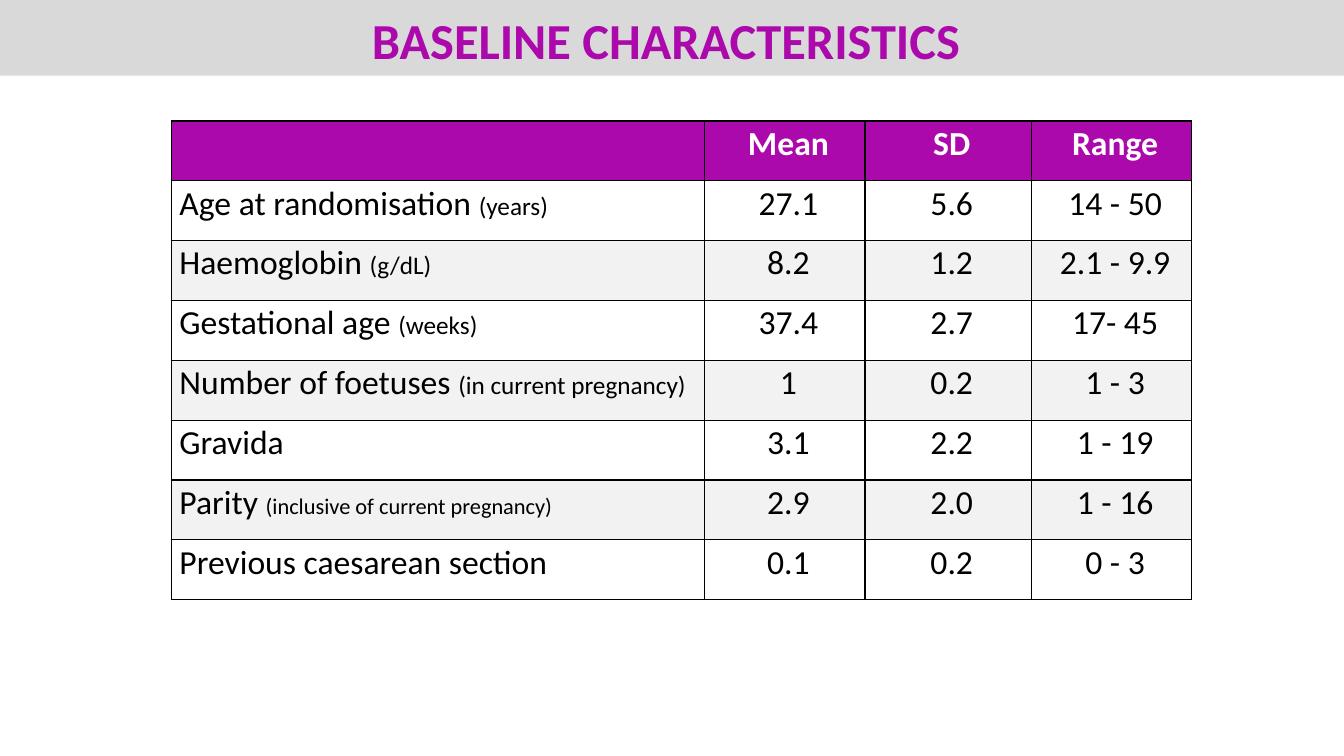
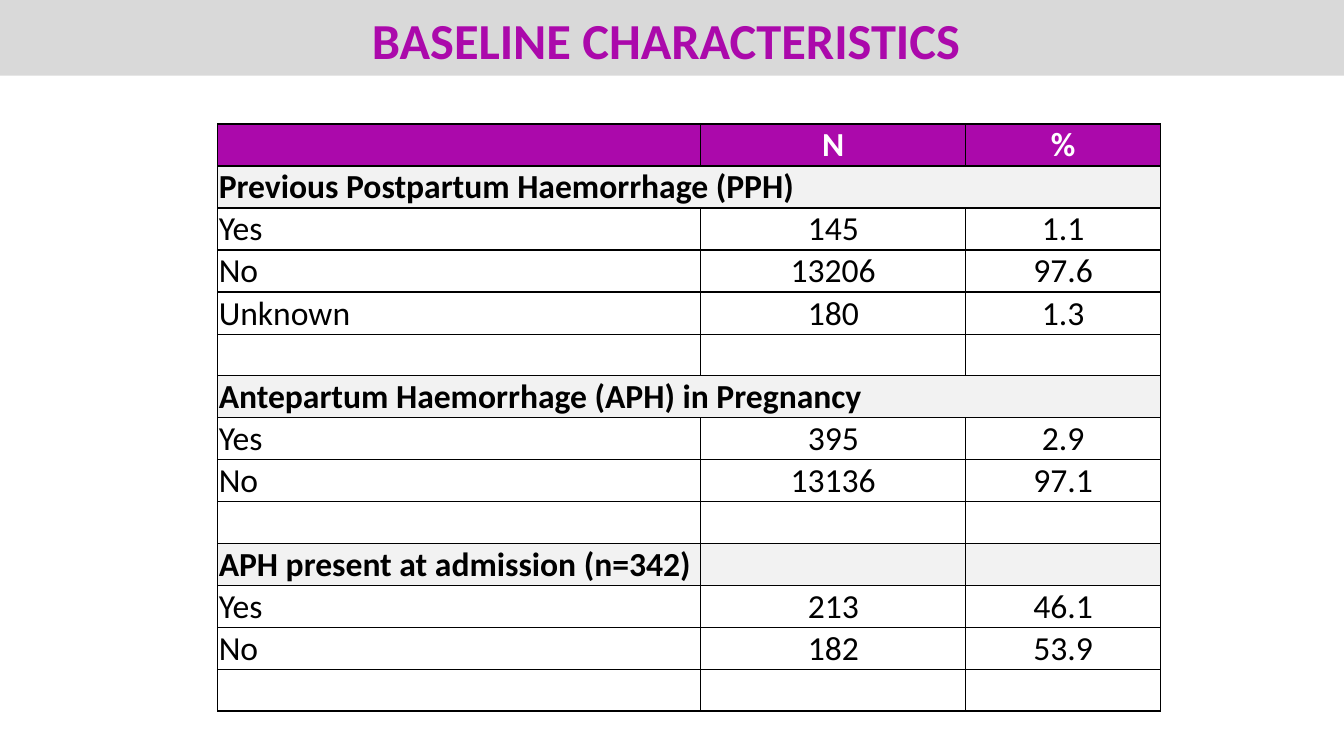
from lxml import etree
from pptx import Presentation
from pptx import util as u
from pptx.dml.color import RGBColor
from pptx.enum import text as t
from pptx.oxml import ns

PX = 9144  # 100 px to the inch
WIDTH, HEIGHT = 1333, 750
FONT = "Calibri"
PURPLE = RGBColor(0xAB, 0x09, 0xAB)
BAND = RGBColor(0xD9, 0xD9, 0xD9)
SHADE = RGBColor(0xF2, 0xF2, 0xF2)
WHITE = RGBColor(0xFF, 0xFF, 0xFF)
BLACK = RGBColor(0, 0, 0)

# The first cell of a row is a label, or a label with a note and its size.
MEANS = [
    ("", "Mean", "SD", "Range"),
    (("Age at randomisation ", "(years)", 18), "27.1", "5.6", "14 - 50"),
    (("Haemoglobin ", "(g/dL)", 18), "8.2", "1.2", "2.1 - 9.9"),
    (("Gestational age ", "(weeks)", 18), "37.4", "2.7", "17- 45"),
    (("Number of foetuses ", "(in current pregnancy)", 18), "1", "0.2", "1 - 3"),
    ("Gravida", "3.1", "2.2", "1 - 19"),
    (("Parity ", "(inclusive of current pregnancy)", 16), "2.9", "2.0", "1 - 16"),
    ("Previous caesarean section", "0.1", "0.2", "0 - 3"),
]
# A row with one cell heads a section; an empty row parts two sections.
COUNTS = [
    ("", "N", "%"),
    ("Previous Postpartum Haemorrhage (PPH)",),
    ("Yes", "145", "1.1"),
    ("No", "13206", "97.6"),
    ("Unknown", "180", "1.3"),
    (),
    ("Antepartum Haemorrhage (APH) in Pregnancy",),
    ("Yes", "395", "2.9"),
    ("No", "13136", "97.1"),
    (),
    ("APH present at admission (n=342)",),
    ("Yes", "213", "46.1"),
    ("No", "182", "53.9"),
    (),
]


def px(n):
    return u.Emu(n * PX)


def write(para, words, size=24, color=BLACK, bold=False, align=None):
    """Add one formatted run to a paragraph."""
    if align is not None:
        para.alignment = align
    run = para.add_run()
    run.text = words
    font = run.font
    font.name, font.size, font.bold = FONT, u.Pt(size), bold
    font.color.rgb = color


def paint(fill, color):
    if color is None:
        fill.background()
    else:
        fill.solid()
        fill.fore_color.rgb = color


def add_slide(deck, title):
    """Add a slide with its title in the grey top band."""
    slide = deck.slides.add_slide(deck.slide_layouts[5])
    band = slide.shapes.title
    band.left, band.top, band.width, band.height = map(px, (0, 0, WIDTH, 75))
    paint(band.fill, BAND)
    frame = band.text_frame
    frame.auto_size = t.MSO_AUTO_SIZE.NONE
    frame.vertical_anchor = t.MSO_ANCHOR.BOTTOM
    para = frame.paragraphs[0]
    para.line_spacing = 0.9
    write(para, title, size=36, color=PURPLE, bold=True, align=t.PP_ALIGN.CENTER)
    return slide


def edge(cell):
    """Draw a thin black line on all four sides of a cell."""
    props = cell._tc.get_or_add_tcPr()
    for side in ("lnL", "lnR", "lnT", "lnB"):
        line = etree.SubElement(props, ns.qn("a:" + side), w=str(u.Pt(1)))
        fill = etree.SubElement(line, ns.qn("a:solidFill"))
        etree.SubElement(fill, ns.qn("a:srgbClr"), val=str(BLACK))


def style(cell, inset, fill, anchor):
    edge(cell)
    paint(cell.fill, fill)
    cell.vertical_anchor = anchor
    (cell.margin_left, cell.margin_top,
     cell.margin_right, cell.margin_bottom) = map(px, inset)


def add_grid(slide, left, top, height, widths, rows, inset, shaded, merged=()):
    """Add a table with a purple head; shaded and merged hold row numbers."""
    box = map(px, (left, top, sum(widths), height))
    table = slide.shapes.add_table(len(rows), len(widths), *box).table
    table.horz_banding = False
    for col, width in zip(table.columns, widths):
        col.width = px(width)
    for i, row in enumerate(rows):
        head = i == 0
        fill = PURPLE if head else SHADE if i in shaded else None
        anchor = t.MSO_ANCHOR.BOTTOM if head else t.MSO_ANCHOR.MIDDLE
        for j in range(len(widths)):
            style(table.cell(i, j), inset, fill, anchor)
        for j, item in enumerate(row):
            if not item:
                continue
            label, *note = item if isinstance(item, tuple) else (item,)
            para = table.cell(i, j).text_frame.paragraphs[0]
            write(para, label, color=WHITE if head else BLACK,
                  bold=head or len(row) == 1,
                  align=t.PP_ALIGN.CENTER if j else t.PP_ALIGN.LEFT)
            if note:
                write(para, note[0], size=note[1])
        if i in merged:
            table.cell(i, 0).merge(table.cell(i, len(widths) - 1))


def main():
    deck = Presentation()
    deck.slide_width, deck.slide_height = px(WIDTH), px(HEIGHT)
    title = "BASELINE CHARACTERISTICS "
    add_grid(add_slide(deck, title), 170, 120, 475, (529, 159, 165, 159),
             MEANS, inset=(8, 2, 1, 16), shaded=range(2, len(MEANS), 2))
    heads = [i for i, row in enumerate(COUNTS) if len(row) == 1]
    add_grid(add_slide(deck, title), 216, 123, 578, (479, 263, 193),
             COUNTS, inset=(1, 1, 1, 0), shaded=heads, merged=heads[:2])
    deck.save("out.pptx")


if __name__ == "__main__":
    main()
